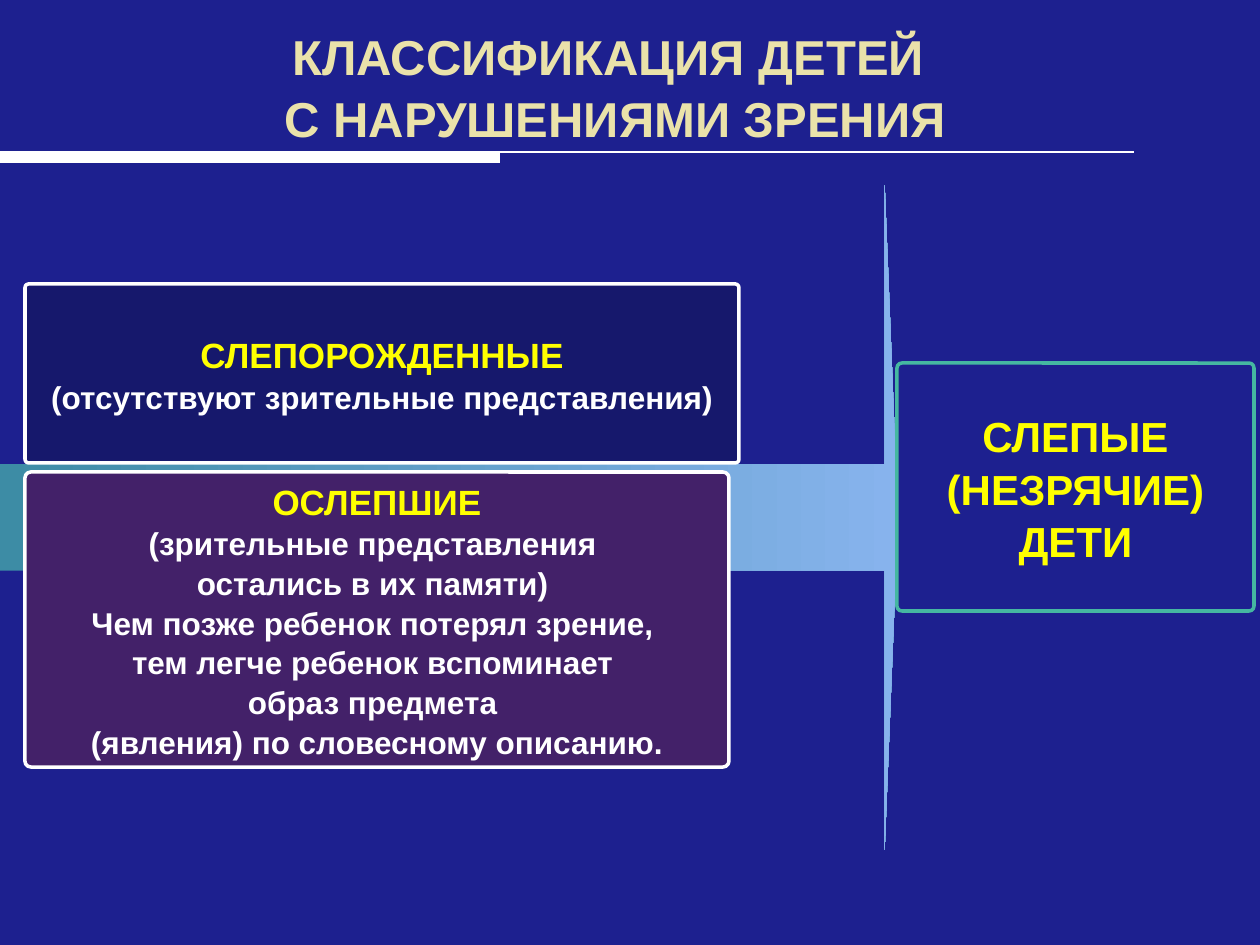
from lxml.etree import SubElement
from pptx import Presentation
from pptx.dml.color import RGBColor
from pptx.enum.shapes import MSO_CONNECTOR, MSO_SHAPE
from pptx.enum.text import MSO_ANCHOR, MSO_AUTO_SIZE, PP_ALIGN
from pptx.oxml.ns import qn
from pptx.util import Emu, Pt

PX = 914400 / 126
COLOURS = {
    "background": "1D208F",
    "title": "EAE2AA",
    "heading": "FFFF00",
    "white": "FFFFFF",
    "teal": "45B7A1",
    "born": "16186C",
    "later": "432169",
    "arrow_start": "3D8CA5",
    "arrow_end": "87B3ED",
}
TEXT_FRAME = {
    "word_wrap": True,
    "auto_size": MSO_AUTO_SIZE.NONE,
    "vertical_anchor": MSO_ANCHOR.MIDDLE,
    "margin_left": Pt(7.2),
    "margin_right": Pt(7.2),
    "margin_top": Pt(3.6),
    "margin_bottom": Pt(3.6),
}
PARAGRAPH = {
    "alignment": PP_ALIGN.CENTER,
    "line_spacing": 1.05,
    "space_before": Pt(0),
    "space_after": Pt(0),
}


def px(length):
    return Emu(round(length * PX))


def colour(name):
    return RGBColor.from_string(COLOURS[name])


def set_values(target, values):
    for name, value in values.items():
        setattr(target, name, value)


def write_text(shape, lines):
    """Fill a shape with centred bold lines of (text, size, colour name)."""
    frame = shape.text_frame
    set_values(frame, TEXT_FRAME)
    for index, (text, size, shade) in enumerate(lines):
        para = frame.paragraphs[0] if index == 0 else frame.add_paragraph()
        para.text = text
        set_values(para, PARAGRAPH)
        for span in para.runs:
            set_values(span.font, {"name": "Arial", "size": Pt(size), "bold": True})
            span.font.color.rgb = colour(shade)


def add_rule(page, length, top, weight):
    rule = page.shapes.add_connector(
        MSO_CONNECTOR.STRAIGHT, 0, px(top), px(length), px(top))
    rule.line.color.rgb = colour("white")
    rule.line.width = Pt(weight)
    SubElement(rule.element.spPr, qn("a:effectLst"))


def add_box(page, place, lines, border, fill=None):
    box = page.shapes.add_shape(MSO_SHAPE.ROUNDED_RECTANGLE, *map(px, place))
    box.shadow.inherit = False
    box.adjustments[0] = 0.02
    if fill:
        box.fill.solid()
        box.fill.fore_color.rgb = colour(fill)
    else:
        box.fill.background()
    box.line.color.rgb = colour(border)
    box.line.width = Pt(2)
    write_text(box, lines)


def add_arrow(page, place):
    arrow = page.shapes.add_shape(MSO_SHAPE.RIGHT_ARROW, *map(px, place))
    arrow.shadow.inherit = False
    arrow.adjustments[0] = 0.16
    arrow.adjustments[1] = 0.02
    arrow.line.fill.background()
    arrow.fill.gradient()
    arrow.fill.gradient_angle = 0
    stops = arrow.fill.gradient_stops
    for stop, position, shade in zip(stops, (0, 1), ("arrow_start", "arrow_end")):
        stop.position = position
        stop.color.rgb = colour(shade)


def add_title(page, place, text):
    title = page.shapes.title
    set_values(title, dict(zip(("left", "top", "width", "height"), map(px, place))))
    write_text(title, [(text, 28, "title")])


def main():
    deck = Presentation()
    deck.slide_width, deck.slide_height = px(1260), px(945)
    page = deck.slides.add_slide(deck.slide_layouts[5])
    page.background.fill.solid()
    page.background.fill.fore_color.rgb = colour("background")

    # Title with its two rules
    add_rule(page, 1134, 152, 1.5)
    add_rule(page, 500, 158, 6)
    add_title(page, (53, 16, 1124, 139),
              "КЛАССИФИКАЦИЯ ДЕТЕЙ \vС НАРУШЕНИЯМИ ЗРЕНИЯ")

    # Arrow leading from the two groups to the category
    add_arrow(page, (0, 185, 898, 665))
    add_box(page, (897, 363, 357, 248),
            [("СЛЕПЫЕ (НЕЗРЯЧИЕ) ДЕТИ", 24, "heading")], "teal")

    # The two groups
    add_box(page, (25, 284, 714, 179), [
        ("СЛЕПОРОЖДЕННЫЕ", 20, "heading"),
        ("(отсутствуют зрительные представления)", 18, "white"),
    ], "white", "born")
    details = (
        "(зрительные представления ",
        "остались в их памяти) ",
        "Чем позже ребенок потерял зрение, ",
        "тем легче ребенок вспоминает ",
        "образ предмета ",
        "(явления) по словесному описанию.",
    )
    add_box(page, (25, 472, 704, 295),
            [("ОСЛЕПШИЕ", 20, "heading")] + [(line, 18, "white") for line in details],
            "white", "later")

    deck.save("out.pptx")


if __name__ == "__main__":
    main()
